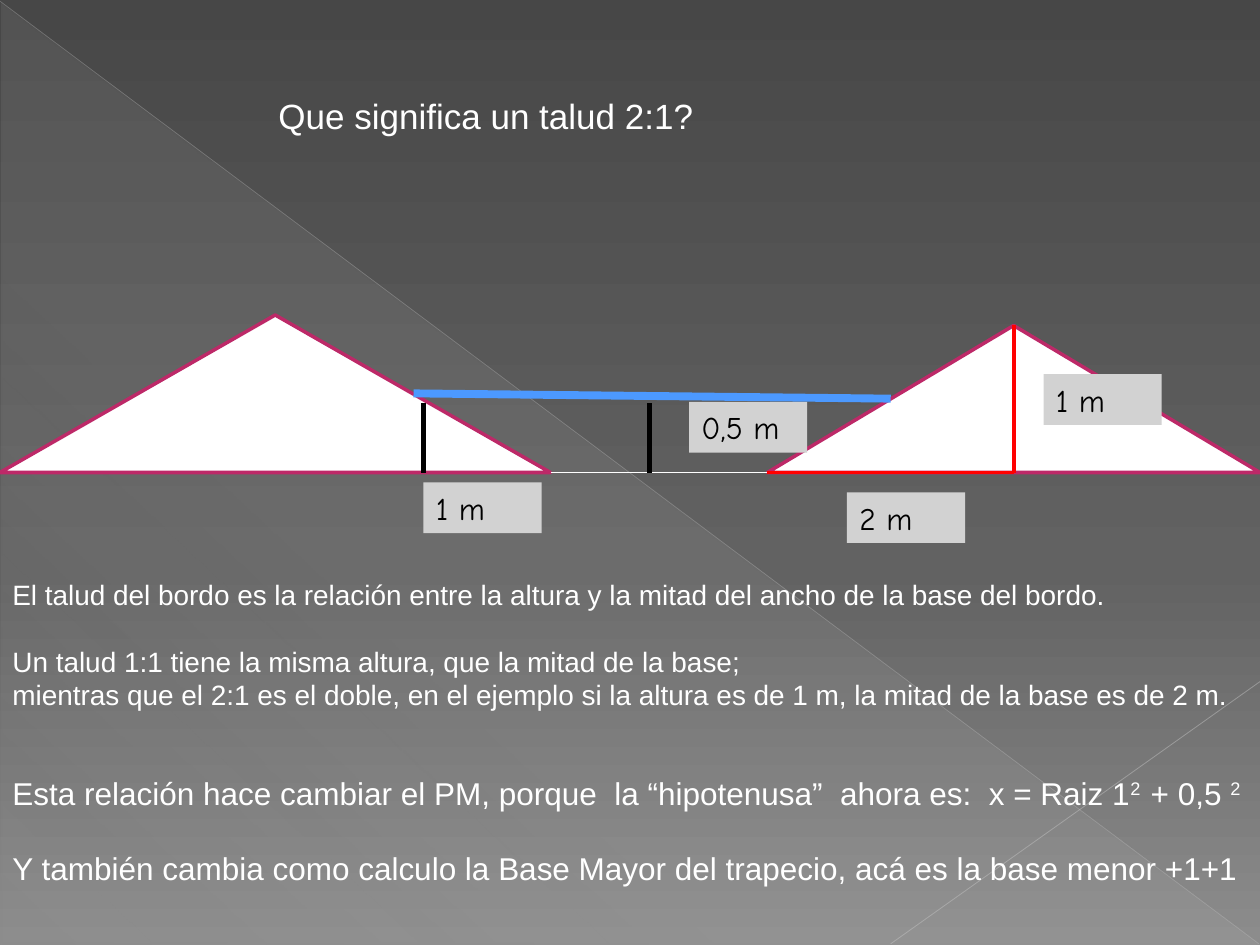
from lxml import etree
from pptx import Presentation
from pptx.dml.color import RGBColor
from pptx.enum.shapes import MSO_CONNECTOR, MSO_SHAPE
from pptx.enum.text import MSO_ANCHOR, PP_ALIGN
from pptx.oxml.ns import qn
from pptx.util import Pt

STRAIGHT = MSO_CONNECTOR.STRAIGHT
RECTANGLE, TRIANGLE = MSO_SHAPE.RECTANGLE, MSO_SHAPE.ISOSCELES_TRIANGLE
RIGHT_TRIANGLE = MSO_SHAPE.RIGHT_TRIANGLE
LEFT, MIDDLE = PP_ALIGN.LEFT, MSO_ANCHOR.MIDDLE

WIDTH, HEIGHT = 720, 540
WHITE, BLACK, RED, GREY = "FFFFFF", "000000", "FF0000", "D2D2D2"
PINK, WATER = "BD2968", "4C99FF"
GROUND = 270  # y of the base line
LABEL_SIZE = (67.5, 29)

# Gradient stops: position %, colour, opacity %
BACKGROUND = [(0, "474747", 100), (60, "626262", 100), (100, "8C8C8C", 100)]
SHEEN = [(0, GREY, 10), (70, GREY, 8), (100, GREY, 1)]

# Decoration lines: x1, y1, x2, y2, colour, width, opacity %
DECORATION = [
    (0, 0.7, 719.3, 539.3, "BFBFBF", 0.39, 35),
    (720, 389.5, 509, 539.3, "C6C6C6", 0.47, 45),
]

# Embankments: left, top, width
RIGHT_BANK = (438.5, 186, 281.5)
LEFT_BANK = (0, 180, 314.6)
BANK_TOE = LEFT_BANK[0] + LEFT_BANK[2]
CREST = RIGHT_BANK[0] + RIGHT_BANK[2] / 2

# Channel and measuring lines: x1, y1, x2, y2, colour, width
CHANNEL = [
    (BANK_TOE, GROUND, RIGHT_BANK[0], GROUND, WHITE, 0.75),
    (CREST, RIGHT_BANK[1], CREST, GROUND, RED, 2.25),
    (CREST, GROUND, RIGHT_BANK[0], GROUND, RED, 2.25),
    (236.3, 224.8, 509, 227.8, WATER, 4.5),
    (371.3, 230.5, 371.3, GROUND, BLACK, 3),
    (242, 230.5, 242, GROUND, BLACK, 3),
]

# Labels: left, top, text
LABELS = [
    (596.3, 213.75, "1 m"),
    (484, 281.3, "2 m"),
    (393.75, 229.6, "0,5 m"),
    (242, 275.7, "1 m"),
]

# Texts: left, top, width, height, size, paragraphs (space before, runs);
# a run is (text, baseline %)
TEXTS = [
    (152, 50.4, 253.5, 31.5, 20, [(0, [("Que significa un talud 2:1?", 0)])]),
    (0, 326.2, 713.5, 104.4, 16, [
        (0, [("El talud del bordo es la relación entre la altura y la mitad "
              "del ancho de la base del bordo.", 0)]),
        (19.2, [("Un talud 1:1 tiene la misma altura, que la mitad de la base;", 0)]),
        (0, [("mientras que el 2:1 es el doble, en el ejemplo si la altura es "
              "de 1 m, la mitad de la base es de 2 m.", 0)]),
    ]),
    (0, 438.5, 725.8, 65.5, 18, [
        (0, [("Esta relación hace cambiar el PM, porque  la “hipotenusa”  "
              "ahora es:  x = Raiz 1", 0),
             ("2  ", 30), ("+ 0,5 ", 0), ("2", 30)]),
        (21.6, [("Y también cambia como calculo la Base Mayor del trapecio, "
                 "acá es la base menor +1+1", 0)]),
    ]),
]


def rgb(value):
    return RGBColor.from_string(value)


def set_alpha(color_element, percent):
    etree.SubElement(color_element, qn("a:alpha"), val=str(percent * 1000))


def set_gradient(fill, element, stops, angle):
    fill.gradient()
    gradient = element.find(".//" + qn("a:gradFill"))
    stop_list = gradient.find(qn("a:gsLst"))
    for stop in list(stop_list):
        stop_list.remove(stop)
    for position, color, opacity in stops:
        stop = etree.SubElement(stop_list, qn("a:gs"), pos=str(position * 1000))
        set_alpha(etree.SubElement(stop, qn("a:srgbClr"), val=color), opacity)
    gradient.find(qn("a:lin")).set("ang", str(angle * 60000))


def add_shape(slide, kind, left, top, width, height, fill=None, line=None):
    shape = slide.shapes.add_shape(kind, Pt(left), Pt(top), Pt(width), Pt(height))
    shape.shadow.inherit = False
    if fill:
        shape.fill.solid()
        shape.fill.fore_color.rgb = rgb(fill)
    if line:
        shape.line.color.rgb = rgb(line)
        shape.line.width = Pt(2)
    else:
        shape.line.fill.background()
    return shape


def add_line(slide, x1, y1, x2, y2, color, width, opacity=100):
    line = slide.shapes.add_connector(STRAIGHT, Pt(x1), Pt(y1), Pt(x2), Pt(y2))
    line.line.color.rgb = rgb(color)
    line.line.width = Pt(width)
    properties = line._element.spPr
    if opacity < 100:
        set_alpha(properties.find(".//" + qn("a:srgbClr")), opacity)
    etree.SubElement(properties, qn("a:effectLst"))


def format_run(run, font, size, color):
    run.font.name = font
    run.font.size = Pt(size)
    run.font.color.rgb = rgb(color)


def add_label(slide, left, top, text):
    label = add_shape(slide, RECTANGLE, left, top, *LABEL_SIZE, fill=GREY)
    frame = label.text_frame
    frame.text = text
    frame.word_wrap = True
    frame.vertical_anchor = MIDDLE
    frame.paragraphs[0].alignment = LEFT
    format_run(frame.paragraphs[0].runs[0], "Comic Neue", 18, BLACK)


def add_text(slide, left, top, width, height, size, paragraphs):
    box = slide.shapes.add_textbox(Pt(left), Pt(top), Pt(width), Pt(height))
    frame = box.text_frame
    frame.word_wrap = False
    for index, (space, runs) in enumerate(paragraphs):
        paragraph = frame.add_paragraph() if index else frame.paragraphs[0]
        paragraph.space_before = Pt(space)
        for text, baseline in runs:
            run = paragraph.add_run()
            run.text = text
            format_run(run, "Arial", size, WHITE)
            if baseline:
                run.font._element.set("baseline", str(baseline * 1000))


def main():
    presentation = Presentation()
    presentation.slide_width, presentation.slide_height = Pt(WIDTH), Pt(HEIGHT)
    slide = presentation.slides.add_slide(presentation.slide_layouts[6])

    # Background and decoration
    set_gradient(slide.background.fill, slide.element, BACKGROUND, 90)
    sheen = add_shape(slide, RIGHT_TRIANGLE, 0.7, 1.4, 719.3, 538.6)
    set_gradient(sheen.fill, sheen._element, SHEEN, 133)
    for line in DECORATION:
        add_line(slide, *line)

    # Embankments, channel and measures
    for left, top, width in (RIGHT_BANK, LEFT_BANK):
        add_shape(slide, TRIANGLE, left, top, width, GROUND - top, WHITE, PINK)
    for line in CHANNEL:
        add_line(slide, *line)
    for label in LABELS:
        add_label(slide, *label)

    # Title and explanation
    for text in TEXTS:
        add_text(slide, *text)

    presentation.save("out.pptx")


if __name__ == "__main__":
    main()
